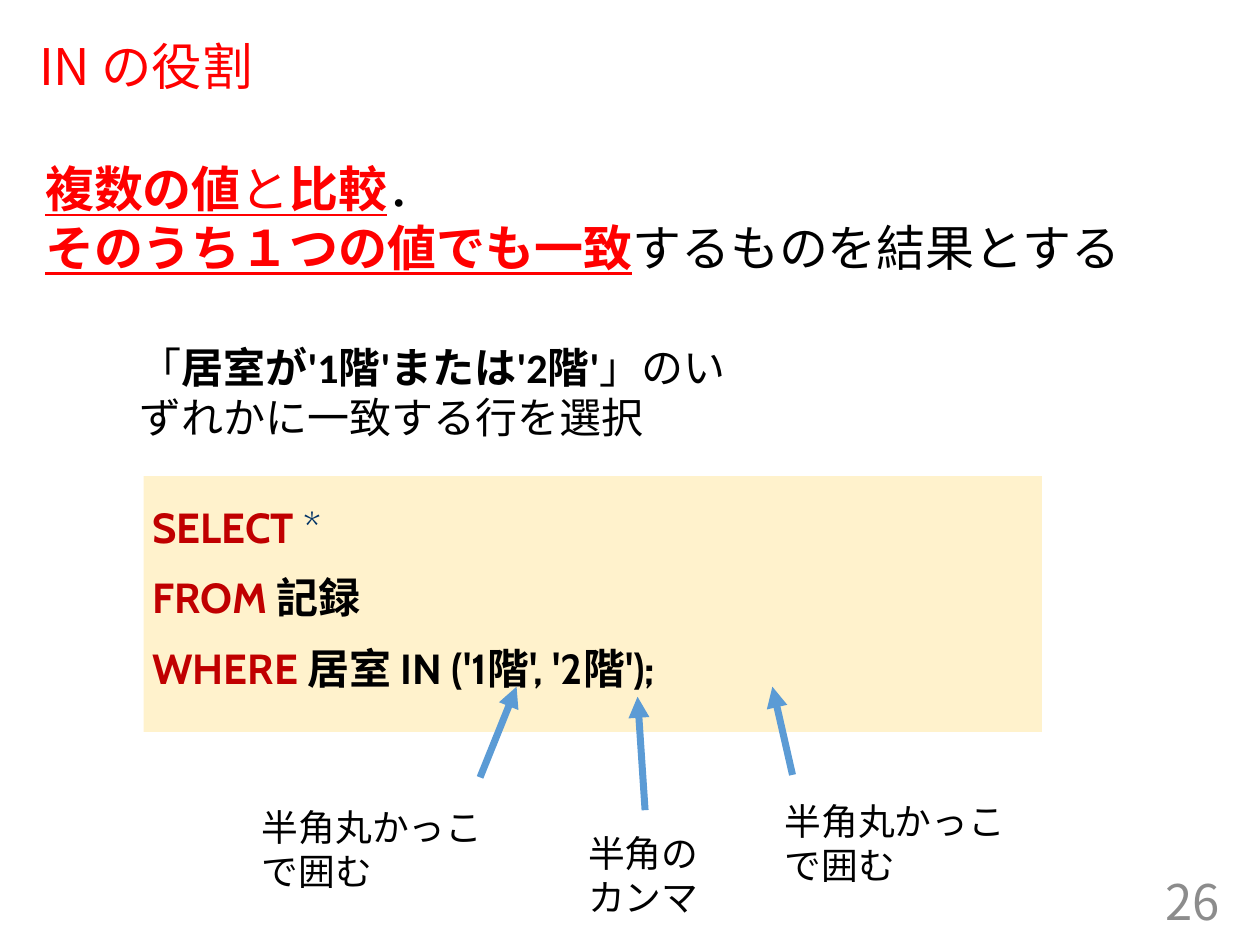
from lxml import etree
from pptx import Presentation
from pptx.dml.color import RGBColor
from pptx.enum.shapes import MSO_CONNECTOR, MSO_SHAPE
from pptx.enum.text import MSO_ANCHOR, MSO_AUTO_SIZE, PP_ALIGN
from pptx.oxml.ns import qn
from pptx.util import Inches, Pt

LEFT, RIGHT = PP_ALIGN.LEFT, PP_ALIGN.RIGHT
TOP, MIDDLE = MSO_ANCHOR.TOP, MSO_ANCHOR.MIDDLE
RECTANGLE, STRAIGHT = MSO_SHAPE.RECTANGLE, MSO_CONNECTOR.STRAIGHT
FIT_SHAPE, FIT_NONE = MSO_AUTO_SIZE.SHAPE_TO_FIT_TEXT, MSO_AUTO_SIZE.NONE
GOTHIC, CALIBRI, CABIN = "Noto Sans CJK JP", "Calibri", "Cabin"
BLACK, RED, KEYWORD, NAVY = "000000", "FF0000", "C00000", "003366"
GREY, CREAM, BLUE = "8C8C8C", "FFF2CC", "5B9BD5"


def rgb(value):
    """Turn a hex string into a colour."""
    return RGBColor.from_string(value)


def place(shape, box):
    """Move a shape to a box of left, top, width and height in inches."""
    shape.left, shape.top, shape.width, shape.height = map(Inches, box)


def write(frame, lines, font, size, align=LEFT, spacing=None):
    """Fill a frame with lines of (text, colour, bold, underline) runs."""
    for index, line in enumerate(lines):
        paragraph = frame.add_paragraph() if index else frame.paragraphs[0]
        paragraph.alignment = align
        paragraph.line_spacing = spacing
        for text, colour, bold, underline in line:
            run = paragraph.add_run()
            run.text = text
            run.font.name, run.font.size = font, Pt(size)
            run.font.bold, run.font.underline = bold, underline
            run.font.color.rgb = rgb(colour)
            east_asian = etree.SubElement(run.font._element, qn("a:ea"))
            east_asian.set("typeface", GOTHIC)


def add_text(slide, box, lines, font, size, wrap=False, align=LEFT, anchor=TOP):
    """Add a text box with styled lines."""
    frame = slide.shapes.add_textbox(*map(Inches, box)).text_frame
    frame.word_wrap = wrap
    frame.auto_size = FIT_SHAPE if anchor == TOP else FIT_NONE
    frame.vertical_anchor = anchor
    write(frame, lines, font, size, align)


def add_title(slide, box):
    """Place and format the title."""
    title = slide.shapes.title
    place(title, box)
    title.text_frame.auto_size = FIT_NONE
    title.text_frame.vertical_anchor = MIDDLE
    write(title.text_frame, [[("IN の役割", RED, False, False)]], GOTHIC, 28.8, spacing=0.9)


def add_summary(slide, box):
    """State what IN does."""
    lines = [
        [("複数の値", RED, True, True), ("と", RED, False, True),
         ("比較", RED, True, True), ("．", BLACK, False, False)],
        [("そのうち１つの値でも一致", RED, True, True),
         ("するものを結果とする", BLACK, False, False)],
    ]
    add_text(slide, box, lines, GOTHIC, 28)


def add_condition(slide, box):
    """Describe the condition of the example query."""
    line = [("「", BLACK, False, False), ("居室が'1階'または'2階'", BLACK, True, False),
            ("」のいずれかに一致する行を選択", BLACK, False, False)]
    add_text(slide, box, [line], CALIBRI, 24, wrap=True)


def add_query(slide, box):
    """Add the panel with the SQL query."""
    panel = slide.shapes.add_shape(RECTANGLE, *map(Inches, box))
    panel.shadow.inherit = False
    panel.fill.solid()
    panel.fill.fore_color.rgb = rgb(CREAM)
    panel.line.fill.background()
    frame = panel.text_frame
    frame.word_wrap = True
    frame.vertical_anchor = TOP
    frame.margin_left = frame.margin_right = Inches(0.07)
    frame.margin_top = frame.margin_bottom = Inches(0.04)
    lines = [
        [("SELECT", KEYWORD, True, False), (" *", NAVY, False, False)],
        [("FROM ", KEYWORD, True, False), ("記録", BLACK, True, False)],
        [("WHERE ", KEYWORD, True, False),
         ("居室 IN ('1階', '2階');", BLACK, True, False)],
    ]
    write(frame, lines, CABIN, 24, spacing=1.4)


def add_note(slide, box, lines, start, end):
    """Add a syntax note and the arrow that points into the query."""
    arrow = slide.shapes.add_connector(STRAIGHT, *map(Inches, start + end))
    arrow.line.color.rgb = rgb(BLUE)
    arrow.line.width = Pt(4)
    head = etree.SubElement(arrow.line._get_or_add_ln(), qn("a:tailEnd"))
    head.set("type", "triangle")
    etree.SubElement(arrow._element.spPr, qn("a:effectLst"))
    add_text(slide, box, [[(text, BLACK, False, False)] for text in lines], CALIBRI, 21)


def add_page_number(slide, box):
    """Add the page number."""
    add_text(slide, box, [[("26", GREY, False, False)]], GOTHIC, 28,
             wrap=True, align=RIGHT, anchor=MIDDLE)


def main():
    """Build the slide and save it."""
    deck = Presentation()
    deck.slide_width, deck.slide_height = Inches(10), Inches(7.5)
    slide = deck.slides.add_slide(deck.slide_layouts[5])
    add_title(slide, (0.21, 0.27, 9.57, 0.55))
    add_page_number(slide, (7.53, 6.95, 2.25, 0.4))
    add_query(slide, (1.14, 3.78, 7.13, 2.03))
    parentheses = ("半角丸かっこ", "で囲む")
    add_note(slide, (1.98, 6.34, 1.97, 0.81), parentheses, (3.81, 6.17), (4.1, 5.45))
    add_note(slide, (6.13, 6.29, 1.97, 0.81), parentheses, (6.29, 6.15), (6.13, 5.45))
    add_note(slide, (4.57, 6.54, 1.09, 0.81), ("半角の", "カンマ"), (5.12, 6.43), (5.06, 5.53))
    add_summary(slide, (0.26, 1.21, 8.84, 1.04))
    add_condition(slide, (1.01, 2.66, 5, 0.91))
    deck.save("out.pptx")


if __name__ == "__main__":
    main()
